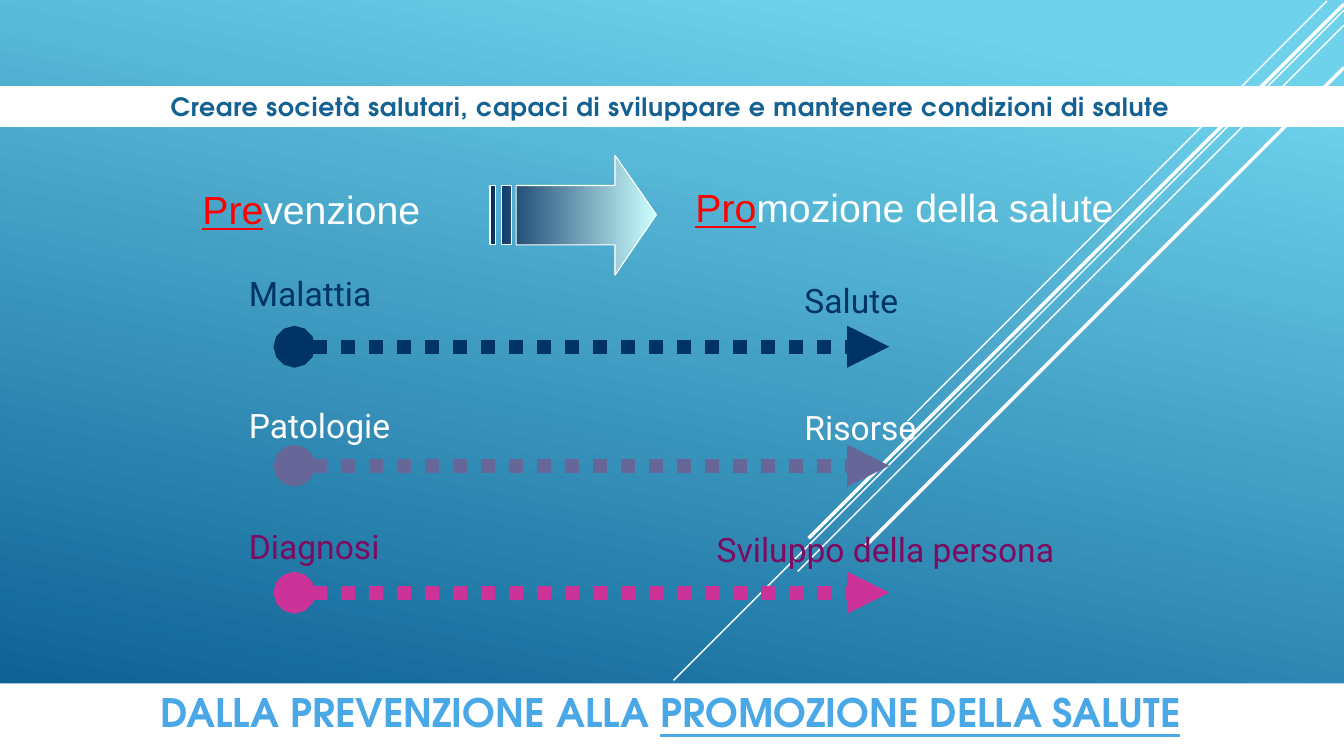
from lxml import etree
from pptx import Presentation
from pptx.dml.color import RGBColor
from pptx.enum.dml import MSO_LINE
from pptx.enum.shapes import MSO_CONNECTOR, MSO_SHAPE
from pptx.enum.text import MSO_ANCHOR, MSO_AUTO_SIZE, PP_ALIGN
from pptx.oxml.ns import qn
from pptx.util import Inches, Pt

WHITE = RGBColor(0xFF, 0xFF, 0xFF)
SKY = RGBColor(0x6E, 0xD2, 0xEB)
DEEP_BLUE = RGBColor(0x06, 0x58, 0x8E)
TITLE_BLUE = RGBColor(0x4A, 0xA8, 0xE7)
BANNER_BLUE = RGBColor(0x14, 0x61, 0x94)
RED = RGBColor(0xFF, 0x00, 0x00)
NAVY = RGBColor(0x00, 0x33, 0x66)
VIOLET = RGBColor(0x66, 0x66, 0x99)
PINK = RGBColor(0xCC, 0x33, 0x99)
PLUM = RGBColor(0x7C, 0x0B, 0x61)
ARROW_DARK = RGBColor(0x05, 0x2F, 0x61)
ARROW_LIGHT = RGBColor(0xCC, 0xFF, 0xFF)

# Content: runs are (text, format changes)
TITLE = [("DALLA PREVENZIONE ALLA ", {}),
         ("PROMOZIONE DELLA SALUTE", {"underline": True})]
BANNER = [("Creare società salutari, capaci di sviluppare e mantenere "
           "condizioni di salute", {})]
PREFIX = {"color": RED, "underline": True}
HEADINGS = [  # box, alignment, runs
    ((1.91, 1.79, 2.44, 0.57), PP_ALIGN.LEFT, [("Pre", PREFIX), ("venzione", {})]),
    ((5.47, 1.77, 7, 0.77), PP_ALIGN.CENTER,
     [("Pro", PREFIX), ("mozione della salute", {})]),
]
SHIFTS = [  # from (text, top), to (text, left, top), text colour, arrow y, arrow colour
    (("Malattia", 2.66), ("Salute", 7.88, 2.73), NAVY, 3.44, NAVY),
    (("Patologie", 3.97), ("Risorse", 7.88, 3.99), WHITE, 4.62, VIOLET),
    (("Diagnosi", 5.17), ("Sviluppo della persona", 7.01, 5.2), PLUM, 5.88, PINK),
]
DIAGONALS = [  # start, end, width
    ((13.16, 0.01), (9, 4.18), 1),
    ((13.33, 0.1), (6.68, 6.75), 1),
    ((13.33, 0.25), (7.91, 5.67), 1),
    ((13.33, 0.04), (8.02, 5.34), 2.5),
    ((13.33, 0.67), (8.58, 5.42), 2.5),
]

# Text formats
TITLE_FORMAT = {"name": "TeX Gyre Adventor", "size": Pt(28), "bold": True,
                "color": TITLE_BLUE}
BANNER_FORMAT = {**TITLE_FORMAT, "size": Pt(18), "color": BANNER_BLUE}
HEADING_FORMAT = {"name": "Arial", "size": Pt(28), "color": WHITE}
LABEL_FORMAT = {"name": "Roboto", "size": Pt(24)}

# Layout
BAND_LEFT, BAND_WIDTH = -0.03, 13.36
LABEL_LEFT, LABEL_WIDTH, LABEL_HEIGHT = 2.37, 3.55, 0.5
SHIFT_START, SHIFT_END = 2.92, 8.82
SHAFT_TOP, SHAFT_BOTTOM = 1.84, 2.43
STRIPES = [(4.97, 5.07), (4.86, 4.91)]
ARROW_HEAD = [(6.1, 1.54), (6.1, SHAFT_TOP), (5.12, SHAFT_TOP), (5.12, SHAFT_BOTTOM),
              (6.1, SHAFT_BOTTOM), (6.1, 2.73), (6.51, 2.13)]


def write(shape, runs, text_format, align=PP_ALIGN.LEFT, anchor=MSO_ANCHOR.TOP):
    frame = shape.text_frame
    frame.word_wrap = True
    frame.auto_size = MSO_AUTO_SIZE.NONE
    frame.vertical_anchor = anchor
    paragraph = frame.paragraphs[0]
    paragraph.alignment = align
    for text, changes in runs:
        run = paragraph.add_run()
        run.text = text
        for key, value in {**text_format, **changes}.items():
            if key == "color":
                run.font.color.rgb = value
            else:
                setattr(run.font, key, value)
    return paragraph


def add_text(slide, box, runs, text_format, align=PP_ALIGN.LEFT):
    write(slide.shapes.add_textbox(*map(Inches, box)), runs, text_format, align)


def add_line(slide, start, end, color, width):
    line = slide.shapes.add_connector(MSO_CONNECTOR.STRAIGHT, *map(Inches, start + end))
    line.line.color.rgb = color
    line.line.width = Pt(width)
    etree.SubElement(line._element.spPr, qn("a:effectLst"))
    return line.line


def set_gradient(fill, stops, angle):
    fill.gradient()
    fill.gradient_angle = angle
    for stop, (position, color) in zip(fill.gradient_stops, stops):
        stop.position = position
        stop.color.rgb = color


def add_striped_arrow(slide):
    stripes = [[(left, SHAFT_TOP), (left, SHAFT_BOTTOM),
                (right, SHAFT_BOTTOM), (right, SHAFT_TOP)] for left, right in STRIPES]
    # Freeform points are whole numbers, so they are given in EMU
    head, *contours = [[(Inches(x), Inches(y)) for x, y in contour]
                       for contour in [ARROW_HEAD, *stripes]]
    builder = slide.shapes.build_freeform(*head[0])
    builder.add_line_segments(head[1:], close=True)
    for contour in contours:
        builder.move_to(*contour[0])
        builder.add_line_segments(contour[1:], close=True)
    arrow = builder.convert_to_shape()
    arrow.shadow.inherit = False
    set_gradient(arrow.fill, [(0, ARROW_DARK), (1, ARROW_LIGHT)], 0)
    arrow.line.color.rgb = WHITE
    arrow.line.width = Pt(0.75)


def main():
    deck = Presentation()
    deck.slide_width, deck.slide_height = Inches(13.33), Inches(7.5)
    slide = deck.slides.add_slide(deck.slide_layouts[5])

    # Background and diagonal lines
    set_gradient(slide.background.fill, [(0.1, SKY), (1, DEEP_BLUE)], 258)
    for start, end, width in DIAGONALS:
        add_line(slide, start, end, WHITE, width)

    # Title band
    title = slide.shapes.title
    title.left, title.top, title.width, title.height = map(
        Inches, (BAND_LEFT, 6.78, BAND_WIDTH, 0.73))
    title.fill.solid()
    title.fill.fore_color.rgb = WHITE
    title.text_frame.margin_bottom = Inches(0.15)
    write(title, TITLE, TITLE_FORMAT, PP_ALIGN.CENTER, MSO_ANCHOR.MIDDLE).line_spacing = 0.9

    # Headings and the arrow between them
    for box, align, runs in HEADINGS:
        add_text(slide, box, runs, HEADING_FORMAT, align)
    add_striped_arrow(slide)

    # Shifts from one idea to another
    for (source, source_top), (target, left, top), color, y, arrow_color in SHIFTS:
        label_format = {**LABEL_FORMAT, "color": color}
        add_text(slide, (LABEL_LEFT, source_top, LABEL_WIDTH, LABEL_HEIGHT),
                 [(source, {})], label_format)
        add_text(slide, (left, top, LABEL_WIDTH, LABEL_HEIGHT),
                 [(target, {})], label_format)
        line = add_line(slide, (SHIFT_START, y), (SHIFT_END, y), arrow_color, 10)
        line.dash_style = MSO_LINE.ROUND_DOT
        for tag, kind in (("a:headEnd", "oval"), ("a:tailEnd", "triangle")):
            etree.SubElement(line._get_or_add_ln(), qn(tag), type=kind)

    # Banner
    banner = slide.shapes.add_shape(
        MSO_SHAPE.RECTANGLE, *map(Inches, (BAND_LEFT, 0.86, BAND_WIDTH, 0.4)))
    banner.shadow.inherit = False
    banner.fill.solid()
    banner.fill.fore_color.rgb = WHITE
    banner.line.color.rgb = WHITE
    banner.line.width = Pt(0.75)
    paragraph = write(banner, BANNER, BANNER_FORMAT, PP_ALIGN.CENTER, MSO_ANCHOR.MIDDLE)
    paragraph.runs[0].font._element.set("spc", "50")

    deck.save("out.pptx")


if __name__ == "__main__":
    main()
